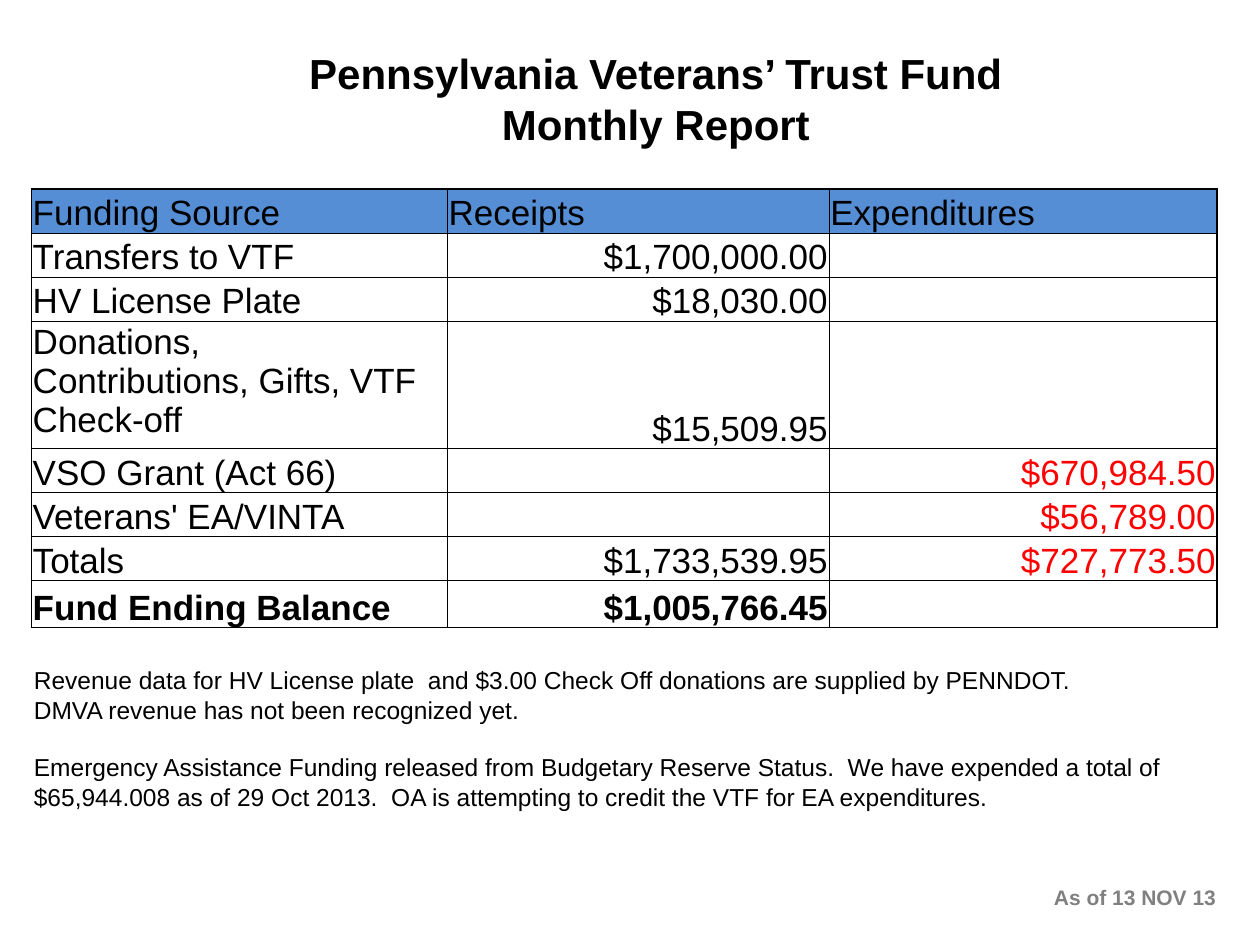
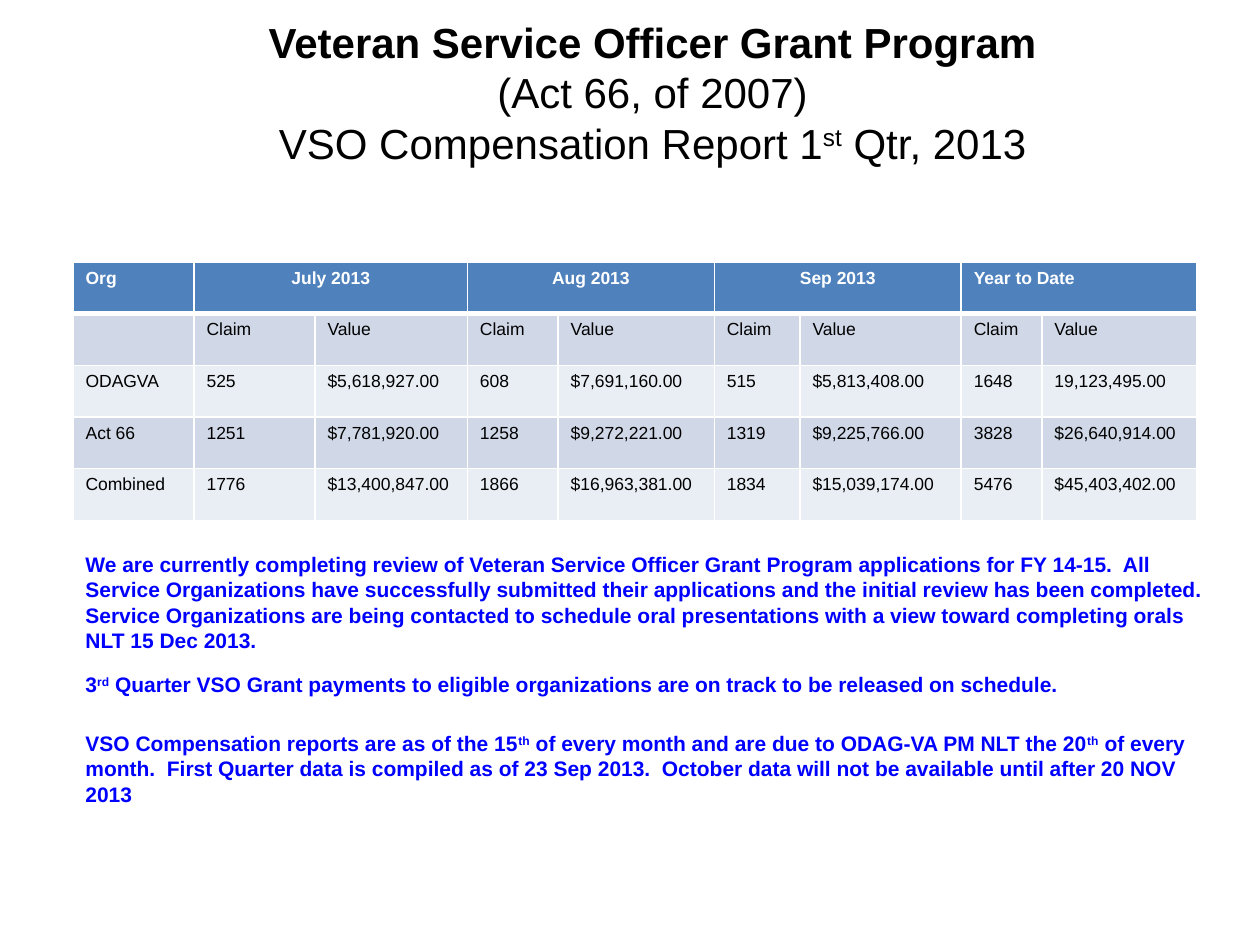
from dataclasses import dataclass
from typing import Callable

from lxml import etree
from pptx import Presentation
from pptx.dml.color import RGBColor
from pptx.enum.text import MSO_ANCHOR, PP_ALIGN
from pptx.oxml.ns import qn
from pptx.util import Inches, Pt

LEFT, CENTER, RIGHT = PP_ALIGN.LEFT, PP_ALIGN.CENTER, PP_ALIGN.RIGHT
TOP, MIDDLE, BOTTOM = MSO_ANCHOR.TOP, MSO_ANCHOR.MIDDLE, MSO_ANCHOR.BOTTOM
BLANK_LAYOUT = 6


# Shared look
@dataclass(frozen=True)
class Theme:
    font: str = "Arial"
    black: str = "000000"
    white: str = "FFFFFF"
    red: str = "FF0000"
    blue: str = "0000FF"
    gray: str = "808080"
    fund_header: str = "558ED5"
    grant_header: str = "4F81BD"
    band_dark: str = "D0D8E8"
    band_light: str = "E9EDF4"
    title_size: int = 24
    fund_size: int = 20
    note_size: int = 14
    small_size: int = 12
    grant_size: int = 10


THEME = Theme()


@dataclass(frozen=True)
class TextStyle:
    size: int
    color: str = THEME.black
    bold: bool = False
    align: PP_ALIGN = LEFT


@dataclass(frozen=True)
class Line:
    """One paragraph: ^ encloses a superscript, | is a line break."""
    text: str
    style: TextStyle


@dataclass(frozen=True)
class TextBox:
    left: float
    top: float
    width: float
    height: float
    lines: tuple[Line, ...]
    wrap: bool = True
    anchor: MSO_ANCHOR = TOP
    space_before: int = 0


@dataclass(frozen=True)
class CellStyle:
    text: TextStyle
    fill: str | None = None
    anchor: MSO_ANCHOR = TOP


@dataclass(frozen=True)
class TableBlock:
    left: float
    top: float
    columns: tuple[float, ...]
    heights: tuple[float, ...]
    rows: tuple[tuple[str, ...], ...]
    margins: tuple[float, float, float, float]
    border_color: str
    cell_style: Callable[[int, int], CellStyle]
    border_widths: Callable[[int, int], dict[str, float]]
    merges: tuple[tuple[int, int], ...] = ()


TITLE = TextStyle(THEME.title_size, bold=True, align=CENTER)
SUBTITLE = TextStyle(THEME.title_size, align=CENTER)
NOTE = TextStyle(THEME.note_size)
BLUE_NOTE = TextStyle(THEME.small_size, THEME.blue, bold=True)
DATE = TextStyle(THEME.small_size, THEME.gray, bold=True, align=RIGHT)


# Drawing functions
def write_line(paragraph, line: Line) -> None:
    style = line.style
    paragraph.alignment = style.align
    for row, row_text in enumerate(line.text.split("|")):
        if row:
            paragraph.add_line_break()
        for index, piece in enumerate(row_text.split("^")):
            if not piece:
                continue
            run = paragraph.add_run()
            run.text = piece
            run.font.name = THEME.font
            run.font.size = Pt(style.size)
            run.font.bold = style.bold
            run.font.color.rgb = RGBColor.from_string(style.color)
            if index % 2:
                run._r.get_or_add_rPr().set("baseline", "30000")


def draw_text(slide, box: TextBox) -> None:
    shape = slide.shapes.add_textbox(Inches(box.left), Inches(box.top),
                                     Inches(box.width), Inches(box.height))
    text_frame = shape.text_frame
    text_frame.word_wrap = box.wrap
    text_frame.vertical_anchor = box.anchor
    for index, line in enumerate(box.lines):
        paragraph = text_frame.add_paragraph() if index else text_frame.paragraphs[0]
        paragraph.space_before = Pt(box.space_before)
        write_line(paragraph, line)


def draw_borders(cell, color: str, widths: dict[str, float]) -> None:
    properties = cell._tc.get_or_add_tcPr()
    for side in "LRTB":
        border = etree.SubElement(properties, qn(f"a:ln{side}"), w=str(Pt(widths[side])))
        fill = etree.SubElement(border, qn("a:solidFill"))
        etree.SubElement(fill, qn("a:srgbClr"), val=color)


def draw_cell(cell, text: str, block: TableBlock, row: int, column: int) -> None:
    style = block.cell_style(row, column)
    draw_borders(cell, block.border_color, block.border_widths(row, column))
    if style.fill:
        cell.fill.solid()
        cell.fill.fore_color.rgb = RGBColor.from_string(style.fill)
    else:
        cell.fill.background()
    cell.margin_left, cell.margin_top, cell.margin_right, cell.margin_bottom = map(
        Inches, block.margins)
    cell.vertical_anchor = style.anchor
    write_line(cell.text_frame.paragraphs[0], Line(text, style.text))


def draw_table(slide, block: TableBlock) -> None:
    table = slide.shapes.add_table(
        len(block.heights), len(block.columns), Inches(block.left), Inches(block.top),
        Inches(sum(block.columns)), Inches(sum(block.heights))).table
    table.first_row = table.horz_banding = False
    for column, width in zip(table.columns, block.columns):
        column.width = Inches(width)
    for row, height in zip(table.rows, block.heights):
        row.height = Inches(height)
    for row, texts in enumerate(block.rows):
        for column, text in enumerate(texts):
            draw_cell(table.cell(row, column), text, block, row, column)
    for first, last in block.merges:
        table.cell(0, first).merge(table.cell(0, last))


# Fund report
FUND_ROWS = (
    ("Funding Source", "Receipts", "Expenditures"),
    ("Transfers to VTF", "$1,700,000.00", ""),
    ("HV License Plate", "$18,030.00", ""),
    ("Donations,|Contributions, Gifts, VTF Check-off", "$15,509.95", ""),
    ("VSO Grant (Act 66)", "", "$670,984.50"),
    ("Veterans' EA/VINTA", "", "$56,789.00"),
    ("Totals", "$1,733,539.95", "$727,773.50"),
    ("Fund Ending Balance", "$1,005,766.45", ""),
)
FUND_LAST_ROW = len(FUND_ROWS) - 1
DONATIONS_ROW = 3


def fund_cell_style(row: int, column: int) -> CellStyle:
    text = TextStyle(
        THEME.fund_size,
        color=THEME.red if row and column == 2 else THEME.black,
        bold=row == FUND_LAST_ROW,
        align=RIGHT if row and column else LEFT)
    anchor = TOP if (row, column) == (DONATIONS_ROW, 0) else BOTTOM
    return CellStyle(text, None if row else THEME.fund_header, anchor)


def fund_border_widths(row: int, column: int) -> dict[str, float]:
    outer = {"L": column == 0, "R": column == 2, "T": row == 0, "B": row == FUND_LAST_ROW}
    return {side: 1 if is_outer else 0.5 for side, is_outer in outer.items()}


FUND_TABLE = TableBlock(
    0.25, 1.5, (3.3, 3.03, 3.08), (0.35, 0.35, 0.35, 1.01, 0.35, 0.35, 0.35, 0.37),
    FUND_ROWS, (0.01, 0.01, 0.01, 0), THEME.black, fund_cell_style, fund_border_widths)

FUND_TEXTS = (
    TextBox(2.33, 0.33, 5.75, 0.91, (
        Line("Pennsylvania Veterans’ Trust Fund", TITLE),
        Line("Monthly Report", TITLE)), wrap=False),
    TextBox(0.17, 5.23, 9.58, 0.57, (
        Line("Revenue data for HV License plate  and $3.00 Check Off donations are "
             "supplied by PENNDOT.|DMVA revenue has not been recognized yet.", NOTE),)),
    TextBox(0.17, 5.92, 9.42, 0.57, (
        Line("Emergency Assistance Funding released from Budgetary Reserve Status.  "
             "We have expended a total of $65,944.008 as of 29 Oct 2013.  OA is "
             "attempting to credit the VTF for EA expenditures.", NOTE),)),
    TextBox(7.17, 6.92, 2.58, 0.4, (Line("As of 13 NOV 13", DATE),),
            anchor=MIDDLE, space_before=6),
)

# Grant report
GRANT_ROWS = (
    ("Org", "July 2013", "", "Aug 2013", "", "Sep 2013", "", "Year to Date", ""),
    ("",) + ("Claim", "Value") * 4,
    ("ODAGVA", "525", "$5,618,927.00", "608", "$7,691,160.00",
     "515", "$5,813,408.00", "1648", "19,123,495.00"),
    ("Act 66", "1251", "$7,781,920.00", "1258", "$9,272,221.00",
     "1319", "$9,225,766.00", "3828", "$26,640,914.00"),
    ("Combined", "1776", "$13,400,847.00", "1866", "$16,963,381.00",
     "1834", "$15,039,174.00", "5476", "$45,403,402.00"),
)


def grant_cell_style(row: int, column: int) -> CellStyle:
    if row == 0:
        align = CENTER if 1 <= column <= 6 else LEFT
        return CellStyle(TextStyle(THEME.grant_size, THEME.white, True, align),
                         THEME.grant_header)
    return CellStyle(TextStyle(THEME.grant_size),
                     THEME.band_dark if row % 2 else THEME.band_light)


def grant_border_widths(row: int, column: int) -> dict[str, float]:
    return {"L": 1, "R": 1, "T": 3 if row == 1 else 1, "B": 3 if row == 0 else 1}


GRANT_TABLE = TableBlock(
    0.58, 2.08, (0.96, 0.96, 1.21, 0.72, 1.24, 0.68, 1.28, 0.64, 1.23),
    (0.41,) * len(GRANT_ROWS), GRANT_ROWS, (0.1, 0.05, 0.1, 0.05), THEME.white,
    grant_cell_style, grant_border_widths,
    merges=tuple((first, first + 1) for first in range(1, 9, 2)))

GRANT_TEXTS = (
    TextBox(2, 0.08, 6.36, 1.72, (
        Line("Veteran Service Officer Grant Program", TITLE),
        Line("(Act 66, of 2007)", SUBTITLE),
        Line("VSO Compensation Report 1^st^ Qtr, 2013", SUBTITLE)), wrap=False),
    TextBox(0.58, 4.33, 9.17, 0.91, (
        Line("We are currently completing review of Veteran Service Officer Grant "
             "Program applications for FY 14-15.  All Service Organizations have "
             "successfully submitted their applications and the initial review has "
             "been completed.  Service Organizations are being contacted to schedule "
             "oral presentations with a view toward completing orals NLT 15 Dec 2013.",
             BLUE_NOTE),)),
    TextBox(0.58, 5.28, 9.17, 0.3, (
        Line("3^rd^ Quarter VSO Grant payments to eligible organizations are on track "
             "to be released on schedule.", BLUE_NOTE),)),
    TextBox(0.58, 5.75, 9.17, 0.71, (
        Line("VSO Compensation reports are as of the 15^th^ of every month and are due "
             "to ODAG-VA PM NLT the 20^th^ of every month.  First Quarter data is "
             "compiled as of 23 Sep 2013.  October data will not be available until "
             "after 20 NOV 2013", BLUE_NOTE),)),
)


def main() -> None:
    presentation = Presentation()
    presentation.slide_width, presentation.slide_height = Inches(10), Inches(7.5)
    for table, texts in ((FUND_TABLE, FUND_TEXTS), (GRANT_TABLE, GRANT_TEXTS)):
        slide = presentation.slides.add_slide(presentation.slide_layouts[BLANK_LAYOUT])
        draw_table(slide, table)
        for box in texts:
            draw_text(slide, box)
    presentation.save("out.pptx")


if __name__ == "__main__":
    main()
